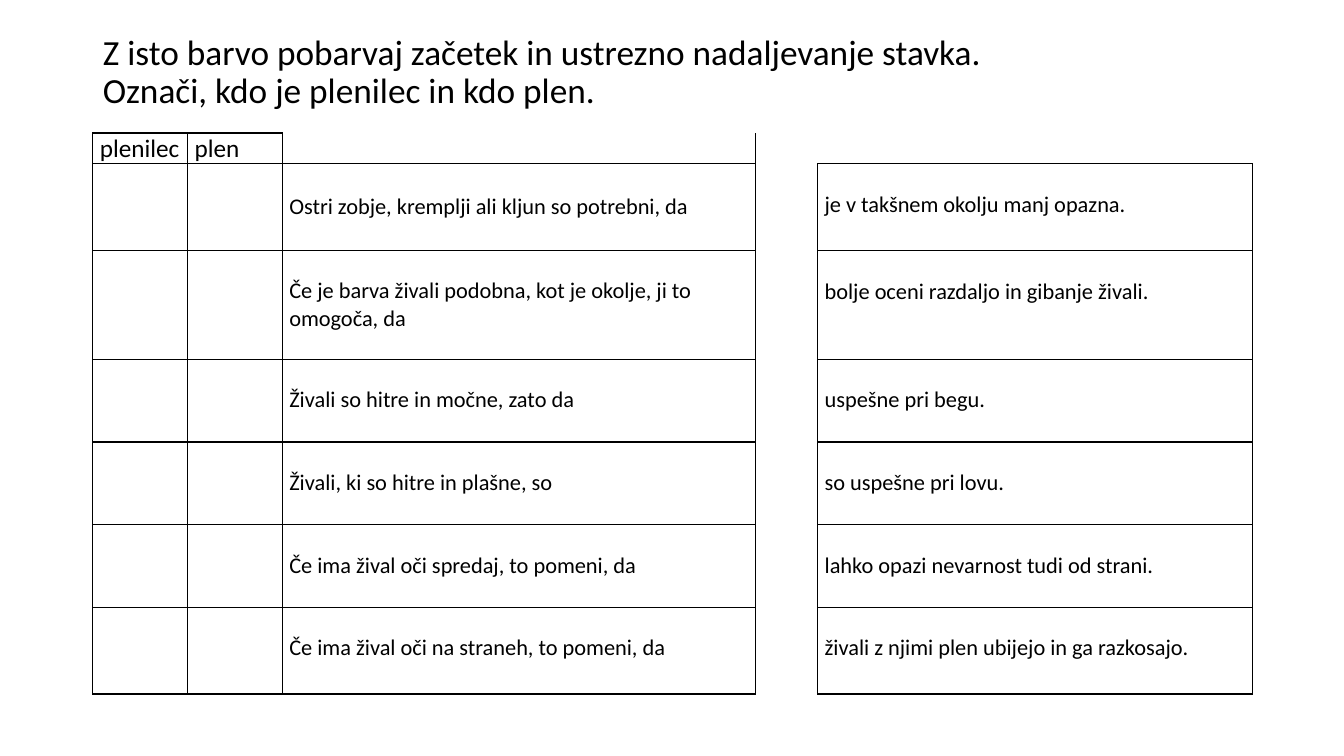
from dataclasses import dataclass
from itertools import product
from lxml.etree import SubElement
from pptx import Presentation
from pptx.dml.color import RGBColor
from pptx.enum.text import MSO_ANCHOR, MSO_AUTO_SIZE
from pptx.oxml.ns import qn
from pptx.util import Inches, Pt

# Content
TITLE = ("Z isto barvo pobarvaj začetek in ustrezno nadaljevanje stavka.\v"
         "Označi, kdo je plenilec in kdo plen.")
HEADS = ["plenilec", "plen"]
PAIRS = [
    ("Ostri zobje, kremplji ali kljun so potrebni, da",
     "je v takšnem okolju manj opazna."),
    ("Če je barva živali podobna, kot je okolje, ji to omogoča, da",
     "bolje oceni razdaljo in gibanje živali."),
    ("Živali so hitre in močne, zato da", "uspešne pri begu."),
    ("Živali, ki so hitre in plašne, so", "so uspešne pri lovu."),
    ("Če ima žival oči spredaj, to pomeni, da",
     "lahko opazi nevarnost tudi od strani."),
    ("Če ima žival oči na straneh, to pomeni, da",
     "živali z njimi plen ubijejo in ga razkosajo."),
]
COLS = [0.94, 0.94, 4.69, 0.62, 4.31]
ROWS = [0.3, 0.86, 1.08, 0.82, 0.82, 0.82, 0.86]
START, GAP, END = 2, 3, 4


@dataclass(frozen=True)
class Theme:
    font: str = "Calibri"
    ink: str = "000000"
    title: float = 25.2
    head: float = 18
    body: float = 16
    line: float = 1
    side: float = 0.07
    drop: float = 0.27


THEME = Theme()


def write(frame, text, size, spacing=None):
    frame.text = text
    for para in frame.paragraphs:
        para.line_spacing = spacing
        para.font.size = Pt(size)
        para.font.name = THEME.font
        para.font.color.rgb = RGBColor.from_string(THEME.ink)


def rule(cell, sides):
    """Draw the cell's borders on the given sides, in schema order."""
    props = cell._tc.get_or_add_tcPr()
    for place, side in enumerate(sides):
        line = SubElement(props, qn(f"a:ln{side}"), w=str(Pt(THEME.line)))
        fill = SubElement(line, qn("a:solidFill"))
        SubElement(fill, qn("a:srgbClr"), val=THEME.ink)
        props.insert(place, line)


def edges(row, col):
    if col == GAP:
        return ""
    if row == 0:
        return {START: "LB", END: "B"}.get(col, "LRTB")
    return "LTB" if col == START else "LRTB"


def build():
    deck = Presentation()
    deck.slide_width, deck.slide_height = Inches(13.33), Inches(7.5)
    slide = deck.slides.add_slide(deck.slide_layouts[5])

    # Title
    title = slide.shapes.title
    title.left, title.top = Inches(0.92), Inches(0.15)
    title.width, title.height = Inches(11.5), Inches(1.15)
    frame = title.text_frame
    frame.word_wrap = True
    frame.auto_size = MSO_AUTO_SIZE.NONE
    frame.vertical_anchor = MSO_ANCHOR.MIDDLE
    write(frame, TITLE, THEME.title, spacing=0.9)
    frame.paragraphs[0].alignment = 1

    # Table grid, plain style
    shape = slide.shapes.add_table(
        len(ROWS), len(COLS), Inches(0.92), Inches(1.32),
        Inches(sum(COLS)), Inches(sum(ROWS)))
    table = shape.table
    table.first_row = table.horz_banding = False
    style = table._tbl.tblPr.find(qn("a:tableStyleId"))
    style.text = "{2D5ABB26-0587-4C30-8999-92F81FD0307C}"
    for col, width in zip(table.columns, COLS):
        col.width = Inches(width)
    for row, height in zip(table.rows, ROWS):
        row.height = Inches(height)
    table.cell(0, GAP).merge(table.cell(len(ROWS) - 1, GAP))

    # Cell format and borders
    for row, col in product(range(len(ROWS)), range(len(COLS))):
        cell = table.cell(row, col)
        cell.margin_left = cell.margin_right = Inches(THEME.side)
        cell.margin_top = cell.margin_bottom = 0
        cell.fill.background()
        rule(cell, edges(row, col))

    # Headings and sentence halves
    for col, text in enumerate(HEADS):
        write(table.cell(0, col).text_frame, text, THEME.head)
    for row, pair in enumerate(PAIRS, 1):
        for col, text in zip((START, END), pair):
            cell = table.cell(row, col)
            write(cell.text_frame, text, THEME.body)
            if col == START and row <= 2:
                cell.vertical_anchor = MSO_ANCHOR.MIDDLE
            else:
                cell.margin_top = Inches(THEME.drop)

    deck.save("out.pptx")


if __name__ == "__main__":
    build()
